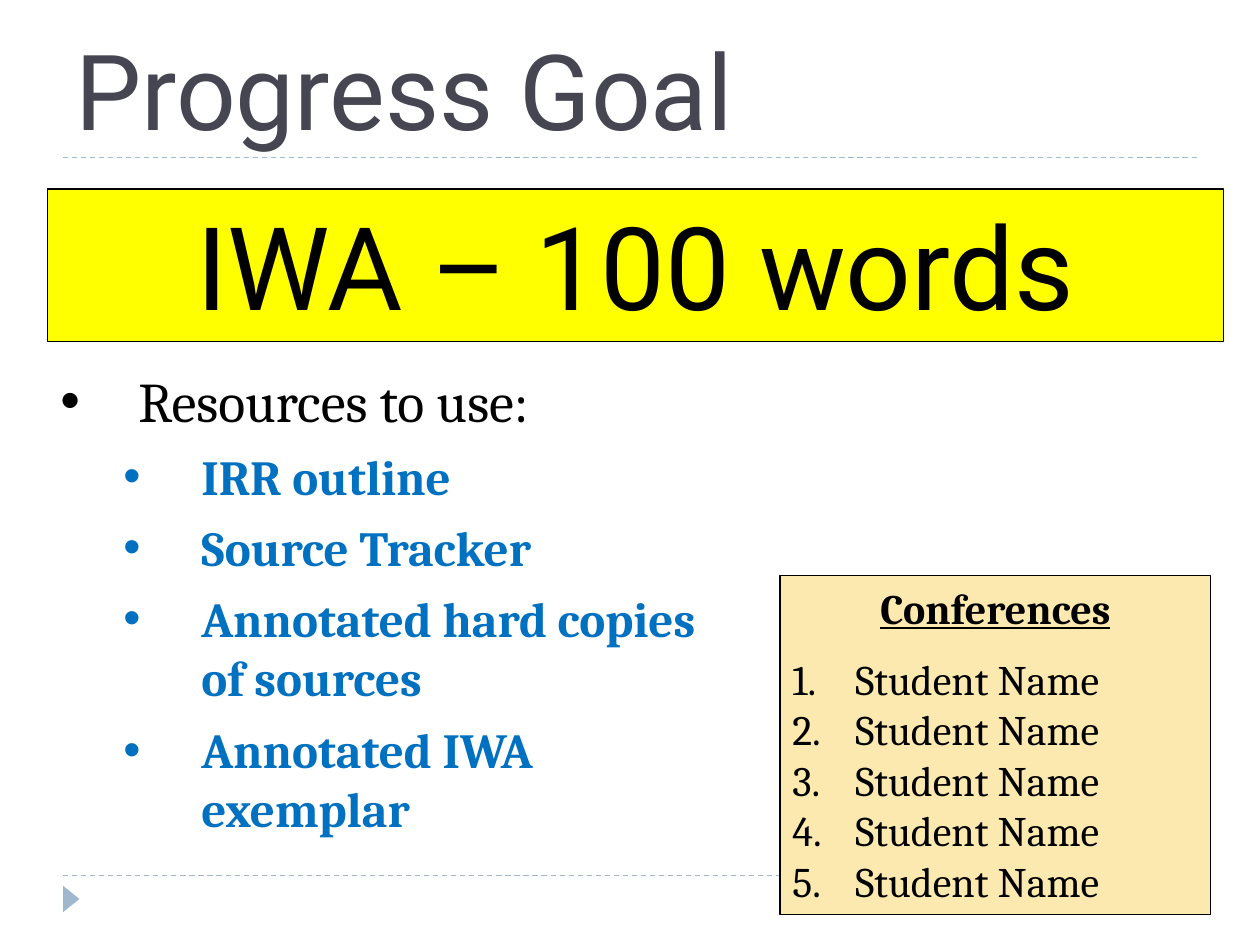
from lxml.etree import SubElement
from pptx import Presentation
from pptx.dml.color import RGBColor
from pptx.enum.dml import MSO_LINE
from pptx.enum.shapes import MSO_CONNECTOR, MSO_SHAPE
from pptx.enum.text import MSO_ANCHOR, PP_ALIGN
from pptx.oxml.ns import qn
from pptx.util import Inches, Pt

COLORS = {
    "accent": "9FB8CD",
    "title": "464653",
    "text": "000000",
    "goal": "FFFF00",
    "resource": "0070C0",
    "conference": "FCE9AF",
}
RESOURCES = [
    ("IRR outline", 7),
    ("Source Tracker", 7),
    ("Annotated hard copies of sources", 7),
    ("Annotated IWA exemplar", 8),
]
STUDENTS = ["Student Name"] * 5


class SlideBuilder:
    """Hold the style and the current slide, and add each kind of element."""

    heading_font = "Roboto"
    body_font = "Cambria"

    def __init__(self, slide):
        """Keep the slide to draw on."""
        self.slide = slide

    def color(self, name):
        """Return a palette colour."""
        return RGBColor.from_string(COLORS[name])

    def rule(self, top):
        """Add a dashed line across the slide."""
        line = self.slide.shapes.add_connector(
            MSO_CONNECTOR.STRAIGHT, Inches(0.5), Inches(top), Inches(9.5), Inches(top)
        )
        line.line.color.rgb = self.color("accent")
        line.line.width = Pt(0.75)
        line.line.dash_style = MSO_LINE.DASH
        SubElement(line._element.spPr, qn("a:effectLst"))

    def shape(self, kind, left, top, width, height, fill, outline=None):
        """Add a filled preset shape."""
        shape = self.slide.shapes.add_shape(
            kind, Inches(left), Inches(top), Inches(width), Inches(height)
        )
        shape.shadow.inherit = False
        shape.fill.solid()
        shape.fill.fore_color.rgb = self.color(fill)
        if outline:
            shape.line.color.rgb = self.color(outline)
            shape.line.width = Pt(0.75)
        else:
            shape.line.fill.background()
        shape.text_frame.vertical_anchor = MSO_ANCHOR.TOP
        return shape

    def text_box(self, left, top, width, height, anchor=MSO_ANCHOR.TOP):
        """Add a wrapping text box."""
        box = self.slide.shapes.add_textbox(
            Inches(left), Inches(top), Inches(width), Inches(height)
        )
        box.text_frame.word_wrap = True
        box.text_frame.vertical_anchor = anchor
        return box

    def paragraph(self, box, text, size, font=body_font, color="text", bold=False,
                  underline=False, align=PP_ALIGN.LEFT, before=0):
        """Write the next paragraph of a box."""
        frame = box.text_frame
        para = frame.add_paragraph() if frame.text else frame.paragraphs[0]
        para.text = text
        para.alignment = align
        para.space_before = Pt(before)
        for span in para.runs:
            span.font.name = font
            span.font.size = Pt(size)
            span.font.bold = bold
            span.font.underline = underline
            span.font.color.rgb = self.color(color)
        return para

    def list_item(self, box, text, size, margin, hanging, numbered=False, level=0, **style):
        """Write a bulleted or numbered paragraph."""
        para = self.paragraph(box, text, size, **style)
        para.level = level
        properties = para._p.get_or_add_pPr()
        properties.set("marL", str(Inches(margin)))
        properties.set("indent", str(-Inches(hanging)))
        if numbered:
            SubElement(properties, qn("a:buAutoNum"), type="arabicPeriod")
        else:
            SubElement(properties, qn("a:buFont"), typeface="Arial")
            SubElement(properties, qn("a:buChar"), char="•")


def main():
    """Build the progress goal slide."""
    deck = Presentation()
    deck.slide_width, deck.slide_height = Inches(10), Inches(7.5)
    page = SlideBuilder(deck.slides.add_slide(deck.slide_layouts[6]))

    for top in (6.95, 1.25):
        page.rule(top)
    marker = page.shape(MSO_SHAPE.ISOSCELES_TRIANGLE, 0.46, 7.07, 0.21, 0.13, "accent")
    marker.rotation = 90

    title = page.text_box(0.5, 0.25, 9, 1, MSO_ANCHOR.BOTTOM)
    page.paragraph(title, "Progress Goal", 60, page.heading_font, "title")

    goal = page.shape(MSO_SHAPE.RECTANGLE, 0.38, 1.5, 9.33, 1.21, "goal", "text")
    page.paragraph(goal, "IWA – 100 words", 66, page.heading_font, align=PP_ALIGN.CENTER)

    resources = page.text_box(0.38, 2.86, 5.38, 3.89)
    page.list_item(resources, "Resources to use:", 32, 0.62, 0.62)
    for name, gap in RESOURCES:
        page.list_item(resources, name, 28, 1.12, 0.62, level=1,
                       color="resource", bold=True, before=gap)

    conferences = page.shape(MSO_SHAPE.RECTANGLE, 6.19, 4.57, 3.42, 2.69, "conference", "text")
    page.paragraph(conferences, "Conferences", 24, bold=True, underline=True,
                   align=PP_ALIGN.CENTER)
    for index, student in enumerate(STUDENTS):
        page.list_item(conferences, student, 24, 0.5, 0.5, numbered=True,
                       before=0 if index else 12)

    deck.save("out.pptx")


if __name__ == "__main__":
    main()
